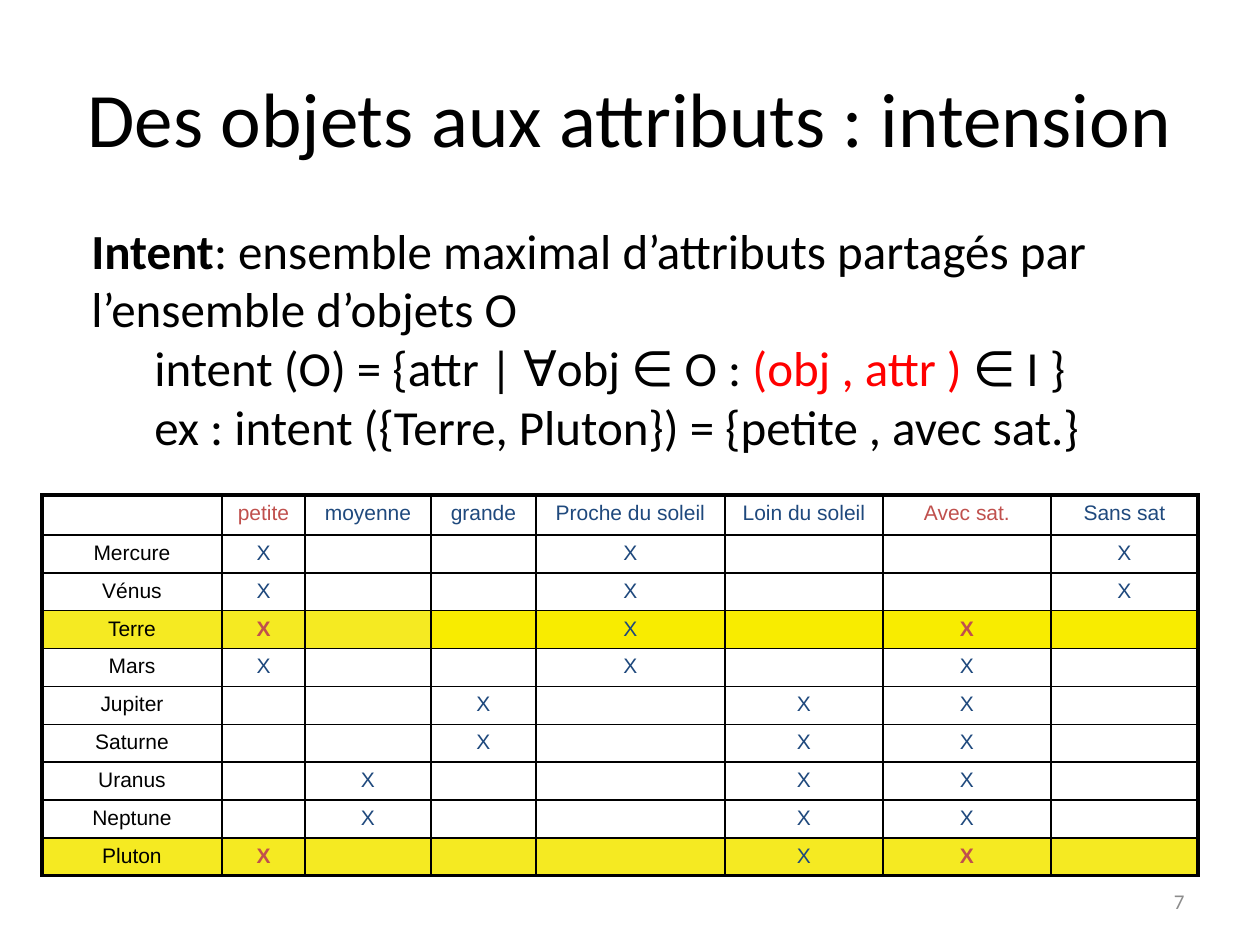
from lxml.etree import SubElement
from pptx import Presentation
from pptx.dml.color import RGBColor
from pptx.enum.text import MSO_ANCHOR as Anchor, PP_ALIGN as Align
from pptx.oxml.ns import qn
from pptx.util import Pt

PX = 914400 / 126  # EMU per pixel
BLACK = RGBColor(0x00, 0x00, 0x00)
BLUE = RGBColor(0x1F, 0x49, 0x7D)
BRICK = RGBColor(0xC0, 0x50, 0x4D)
RED = RGBColor(0xFF, 0x00, 0x00)
GREY = RGBColor(0x8C, 0x8C, 0x8C)
YELLOW = RGBColor(0xF5, 0xEA, 0x22)
BRIGHT = RGBColor(0xF8, 0xEC, 0x00)


def px(n):
    return round(n * PX)


class SlideBuilder:
    body_font, table_font = "Calibri", "Arial"
    thin, thick = Pt(1), Pt(2.25)

    def __init__(self, slide):
        self.s = slide

    def style(self, p, font, size, color, align=Align.LEFT):
        p.alignment = align
        p.font.name, p.font.size = font, Pt(size)
        p.font.color.rgb = color

    def text(self, box, paragraphs, size, color=BLACK, align=Align.LEFT,
             anchor=Anchor.TOP):
        """Each paragraph is (indent, runs); each run is (text, bold, color)."""
        sp = self.s.shapes.add_textbox(*map(px, box))
        tf = sp.text_frame
        tf.word_wrap = True
        tf.vertical_anchor = anchor
        for i, (indent, runs) in enumerate(paragraphs):
            p = tf.add_paragraph() if i else tf.paragraphs[0]
            self.style(p, self.body_font, size, color, align)
            if indent:
                p.level = 1
                p._p.get_or_add_pPr().set("marL", str(px(indent)))
            for words, bold, run_color in runs:
                r = p.add_run()
                r.text = words
                if bold:
                    r.font.bold = True
                if run_color:
                    r.font.color.rgb = run_color

    def table(self, left, top, widths, heights):
        frame = self.s.shapes.add_table(
            len(heights), len(widths), px(left), px(top),
            px(sum(widths)), px(sum(heights)))
        table = frame.table
        table.first_row = table.horz_banding = False
        for column, width in zip(table.columns, widths):
            column.width = px(width)
        for row, height in zip(table.rows, heights):
            row.height = px(height)
        return table

    def cell(self, cell, text, color, bold, fill, outer):
        """outer holds the sides (L, R, T, B) that lie on the table's edge."""
        p = cell.text_frame.paragraphs[0]
        self.style(p, self.table_font, 12, color, Align.CENTER)
        if text:
            p.add_run().text = text
            p.font.bold = bold
        else:
            p._p.get_or_add_endParaRPr().set("sz", "1200")
        tc_pr = cell._tc.get_or_add_tcPr()
        for side in "LRTB":
            width = self.thick if side in outer else self.thin
            ln = SubElement(tc_pr, qn("a:ln" + side), w=str(width))
            SubElement(SubElement(ln, qn("a:solidFill")), qn("a:srgbClr"),
                       val=str(BLACK))
        if fill:
            cell.fill.solid()
            cell.fill.fore_color.rgb = fill
        else:
            cell.fill.background()


ATTRIBUTES = ["petite", "moyenne", "grande", "Proche du soleil",
              "Loin du soleil", "Avec sat.", "Sans sat"]
PLANETS = {  # columns marked with an X
    "Mercure": (1, 4, 7), "Vénus": (1, 4, 7), "Terre": (1, 4, 6),
    "Mars": (1, 4, 6), "Jupiter": (3, 5, 6), "Saturne": (3, 5, 6),
    "Uranus": (2, 5, 6), "Neptune": (2, 5, 6), "Pluton": (1, 5, 6),
}
EXAMPLE = ("Terre", "Pluton")
SHARED = (1, 6)  # columns common to the example planets


def planet_table(b):
    widths = [180, 83, 126, 105, 189, 158, 168, 147]
    heights = [40] + [36] * len(PLANETS)
    table = b.table(42, 495, widths, heights)
    rows = [[""] + ATTRIBUTES]
    for name, marks in PLANETS.items():
        rows.append([name] + ["X" if c in marks else ""
                              for c in range(1, len(widths))])
    last_row, last_col = len(rows) - 1, len(widths) - 1
    for i, row in enumerate(rows):
        chosen = row[0] in EXAMPLE
        for j, text in enumerate(row):
            key = j in SHARED and (chosen or i == 0)
            color = BLACK if j == 0 else BRICK if key else BLUE
            fill = None
            if chosen:
                fill = BRIGHT if row[0] == "Terre" and j >= 3 else YELLOW
            edges = {"L": j == 0, "R": j == last_col,
                     "T": i == 0, "B": i == last_row}
            outer = [side for side, on_edge in edges.items() if on_edge]
            b.cell(table.cell(i, j), text, color, key and chosen, fill, outer)


def main():
    prs = Presentation()
    prs.slide_width, prs.slide_height = px(1260), px(945)
    b = SlideBuilder(prs.slides.add_slide(prs.slide_layouts[6]))

    # Title
    b.text((63, 38, 1134, 158),
           [(0, [("Des objets aux attributs : intension", False, None)])],
           44, align=Align.CENTER, anchor=Anchor.MIDDLE)

    # Planets and their attributes
    planet_table(b)

    # Slide number
    b.text((903, 876, 294, 50), [(0, [("7", False, None)])], 12, GREY,
           Align.RIGHT, Anchor.MIDDLE)

    # Definition and example
    b.text((79, 214, 1086, 251), [
        (0, [("Intent", True, None),
             (": ensemble maximal d’attributs partagés par "
              "l’ensemble d’objets O", False, None)]),
        (63, [("intent (O) = {attr | ∀obj ∈ O : ", False, None),
              ("(obj , attr )", False, RED),
              (" ∈ I }", False, None)]),
        (63, [("ex : intent ({Terre, Pluton}) = {petite , avec sat.}",
               False, None)]),
    ], 28)

    prs.save("out.pptx")


if __name__ == "__main__":
    main()
